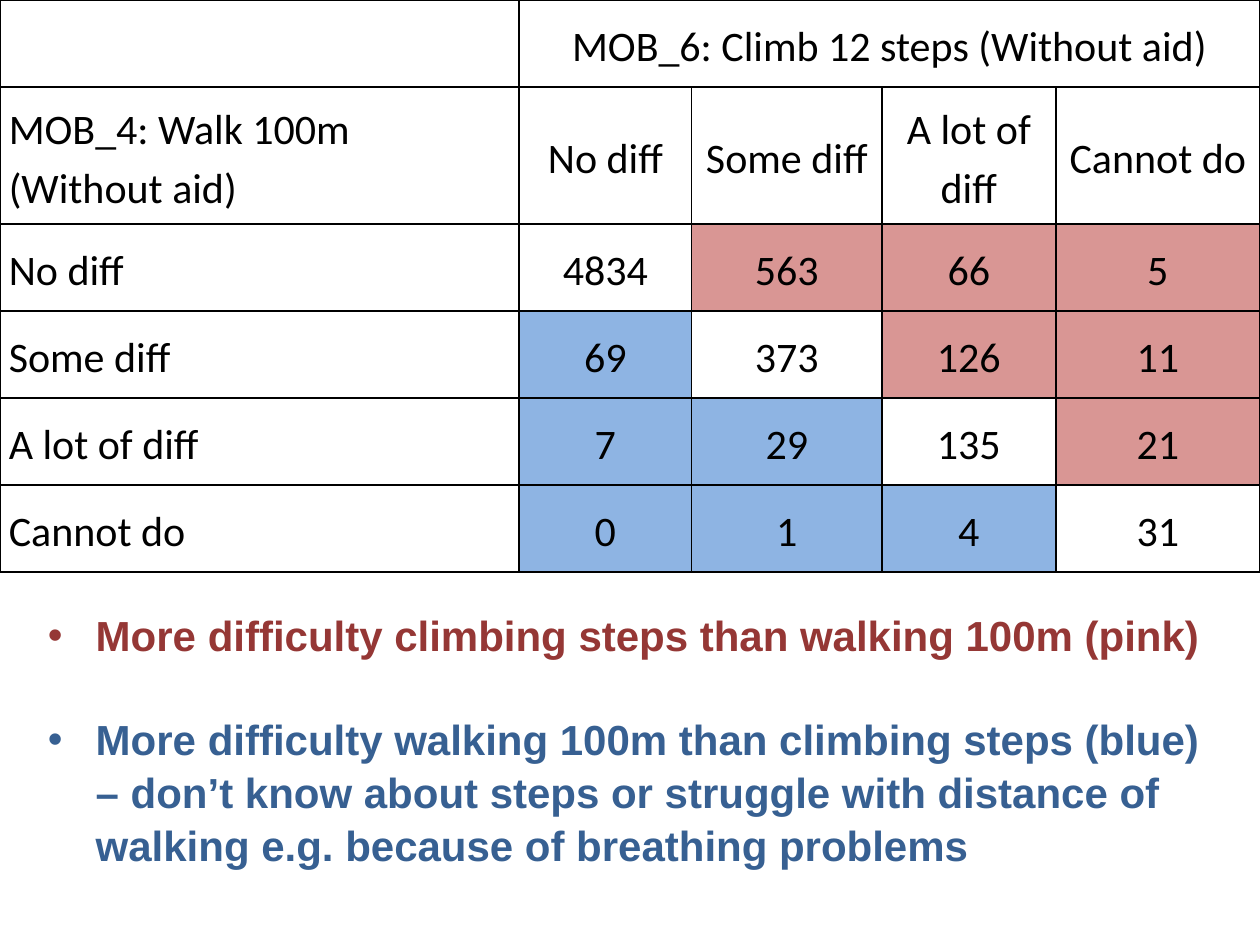
from pptx import Presentation
from pptx.dml.color import RGBColor
from pptx.enum import text as t
from pptx.oxml import parse_xml
from pptx.oxml.ns import nsdecls
from pptx.util import Inches, Pt

# Content
HEAD = "MOB_6: Climb 12 steps (Without aid)"
SIDE = "MOB_4: Walk 100m (Without aid)"
LEVELS = ["No diff", "Some diff", "A lot of diff", "Cannot do"]
COUNTS = [
    [4834, 563, 66, 5],
    [69, 373, 126, 11],
    [7, 29, 135, 21],
    [0, 1, 4, 31],
]
NOTES = [
    ("More difficulty climbing steps than walking 100m (pink)", "953735"),
    ("More difficulty walking 100m than climbing steps (blue) – don’t know "
     "about steps or struggle with distance of walking e.g. because of "
     "breathing problems", "376092"),
]
COLS = [4.12, 1.37, 1.51, 1.38, 1.62]
ROWS = [0.69, 1.09, 0.69, 0.69, 0.69, 0.69]
PINK, BLUE, WHITE, BLACK = "D99694", "8EB4E3", "FFFFFF", "000000"


def style(par, font, color, bold=False):
    for run in par.runs:
        run.font.name, run.font.size, run.font.bold = font, Pt(24), bold
        run.font.color.rgb = RGBColor.from_string(color)


def border(cell):
    props = cell._tc.get_or_add_tcPr()
    for i, side in enumerate(("lnL", "lnR", "lnT", "lnB")):
        props.insert(i, parse_xml(
            f'<a:{side} {nsdecls("a")} w="12700"><a:solidFill>'
            f'<a:srgbClr val="{BLACK}"/></a:solidFill></a:{side}>'))


def shade(r, c):
    row, col = r - 2, c - 1
    if row < 0 or col < 0 or row == col:
        return WHITE
    return PINK if col > row else BLUE


prs = Presentation()
prs.slide_width, prs.slide_height = Inches(10), Inches(7.5)
slide = prs.slides.add_slide(prs.slide_layouts[1])
title = slide.shapes.title
title._element.getparent().remove(title._element)

# Notes below the table
body = slide.placeholders[1]
body.left, body.top = Inches(0.28), Inches(4.77)
body.width, body.height = Inches(9.45), Inches(2.36)
frame = body.text_frame
frame.auto_size = t.MSO_AUTO_SIZE.NONE
frame.text = "\n".join(note for note, _ in NOTES)
for i, (par, (_, color)) in enumerate(zip(frame.paragraphs, NOTES)):
    style(par, "Arial", color, True)
    par.line_spacing = 1.05
    par.space_before = Pt(29 * i)
    props = par._p.get_or_add_pPr()
    props.set("marL", str(Inches(0.38)))
    props.set("indent", str(-Inches(0.38)))

# Cross table
grid = [["", HEAD, "", "", ""], [SIDE] + LEVELS]
grid += [[level] + row for level, row in zip(LEVELS, COUNTS)]
table = slide.shapes.add_table(len(ROWS), len(COLS), 0, 0, Inches(sum(COLS)),
                               Inches(sum(ROWS))).table
table.first_row = table.horz_banding = False
for col, width in zip(table.columns, COLS):
    col.width = Inches(width)
for row, height in zip(table.rows, ROWS):
    row.height = Inches(height)
table.cell(0, 1).merge(table.cell(0, 4))

for r, line in enumerate(grid):
    for c, value in enumerate(line):
        cell = table.cell(r, c)
        cell.text = str(value)
        cell.vertical_anchor = t.MSO_ANCHOR.MIDDLE
        cell.margin_left = cell.margin_right = Inches(0.07)
        cell.margin_top = cell.margin_bottom = 0
        cell.fill.solid()
        cell.fill.fore_color.rgb = RGBColor.from_string(shade(r, c))
        border(cell)
        par = cell.text_frame.paragraphs[0]
        par.alignment = t.PP_ALIGN.CENTER if c else t.PP_ALIGN.LEFT
        par.line_spacing = 1.15
        style(par, "Calibri", BLACK)

prs.save("out.pptx")
